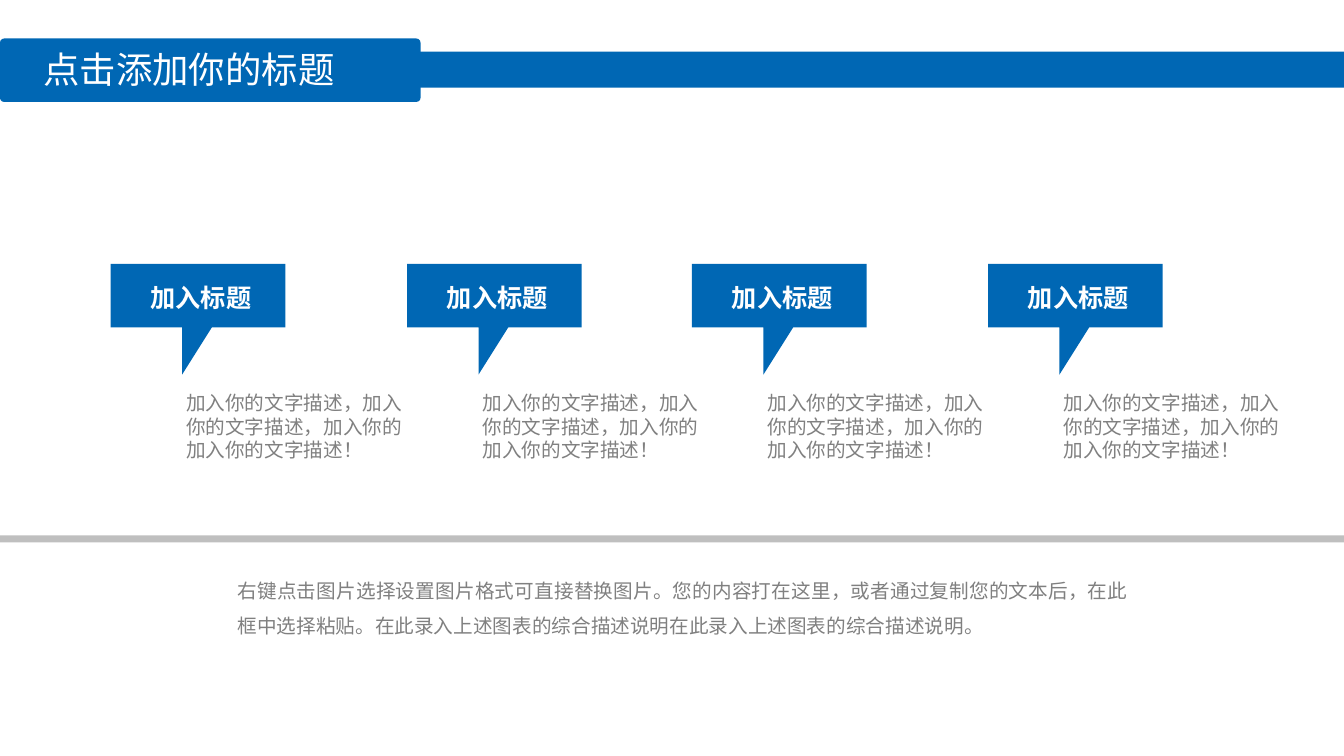
import pptx
import pptx.dml.color
import pptx.enum.shapes
import pptx.enum.text
import pptx.oxml.ns
import pptx.util
from pptx.util import Cm

BLUE = pptx.dml.color.RGBColor(0x00, 0x67, 0xB4)
SILVER = pptx.dml.color.RGBColor(0xBF, 0xBF, 0xBF)
GRAY = pptx.dml.color.RGBColor(0x80, 0x80, 0x80)
WHITE = pptx.dml.color.RGBColor(0xFF, 0xFF, 0xFF)
FONT_NAME = "Noto Sans CJK SC"
ALIGN = pptx.enum.text.PP_ALIGN
SHAPE = pptx.enum.shapes.MSO_SHAPE

CARD_LEFTS = (2.79, 10.26, 17.44, 24.9)
CARD_TOP = 6.65
CALLOUT_OUTLINE = ((0, 0), (4.4, 0), (4.4, 1.6), (2.55, 1.6), (1.8, 2.79), (1.8, 1.6), (0, 1.6))
CARD_TITLE = "加入标题"
CARD_TEXT = ("加入你的文字描述，加入你的文字描述，加入你的", "加入你的文字描述！")
SUMMARY = (
    "右键点击图片选择设置图片格式可直接替换图片。您的内容打在这里，或者通过复制您的文本后，"
    "在此框中选择粘贴。在此录入上述图表的综合描述说明在此录入上述图表的综合描述说明。"
)


def paint(shape, color):
    shape.shadow.inherit = False
    shape.fill.solid()
    shape.fill.fore_color.rgb = color
    shape.line.fill.background()


def add_block(shapes, kind, left, top, width, height, color):
    shape = shapes.add_shape(kind, Cm(left), Cm(top), Cm(width), Cm(height))
    paint(shape, color)
    return shape


def add_text(shapes, lines, left, top, width, height, *, size, color, bold=False,
             align=ALIGN.LEFT, line_points, space_after=0, inset=0.0):
    """Add one paragraph per line, with a fixed line pitch in points."""
    frame = shapes.add_textbox(Cm(left), Cm(top), Cm(width), Cm(height)).text_frame
    frame.word_wrap = True
    frame.margin_top = frame.margin_bottom = Cm(inset)
    for index, line in enumerate(lines):
        paragraph = frame.paragraphs[0] if index == 0 else frame.add_paragraph()
        paragraph.alignment = align
        paragraph.line_spacing = pptx.util.Pt(line_points)
        paragraph.space_after = pptx.util.Pt(space_after)
        run = paragraph.add_run()
        run.text = line
        run.font.name = FONT_NAME
        run.font.size = pptx.util.Pt(size)
        run.font.bold = bold
        run.font.color.rgb = color
        east_asian = run.font._element.makeelement(pptx.oxml.ns.qn("a:ea"), {"typeface": FONT_NAME})
        run.font._element.append(east_asian)


def add_header(shapes):
    header = shapes.add_group_shape().shapes
    add_block(header, SHAPE.RECTANGLE, 0.48, 1.3, 33.39, 0.91, BLUE)
    label = add_block(header, SHAPE.ROUNDED_RECTANGLE, 0, 0.97, 10.6, 1.6, BLUE)
    label.adjustments[0] = 0.067
    add_text(header, ["点击添加你的标题"], 0.84, 1.04, 9.35, 1.37,
             size=26, color=WHITE, line_points=32, inset=0.13)


def add_card(shapes, left):
    points = [(Cm(left + x), Cm(CARD_TOP + y)) for x, y in CALLOUT_OUTLINE]
    builder = shapes.build_freeform(*points[0])
    builder.add_line_segments(points[1:], close=True)
    paint(builder.convert_to_shape(), BLUE)
    add_text(shapes, [CARD_TITLE], left + 0.04, 7.1, 4.47, 0.71,
             size=18, color=WHITE, bold=True, align=ALIGN.CENTER, line_points=22)
    add_text(shapes, CARD_TEXT, left + 1.65, 9.86, 6.35, 1.4,
             size=14, color=GRAY, line_points=16.8)


def main():
    presentation = pptx.Presentation()
    presentation.slide_width = Cm(33.87)
    presentation.slide_height = Cm(19.05)
    shapes = presentation.slides.add_slide(presentation.slide_layouts[6]).shapes

    add_header(shapes)
    for left in CARD_LEFTS:
        add_card(shapes, left)
    add_block(shapes, SHAPE.RECTANGLE, 0, 13.49, 33.87, 0.18, SILVER)
    add_text(shapes, [SUMMARY], 5.74, 14.17, 22.94, 1.96, size=14, color=GRAY,
             align=ALIGN.JUSTIFY, line_points=25, space_after=12, inset=0.13)

    presentation.save("out.pptx")


if __name__ == "__main__":
    main()
